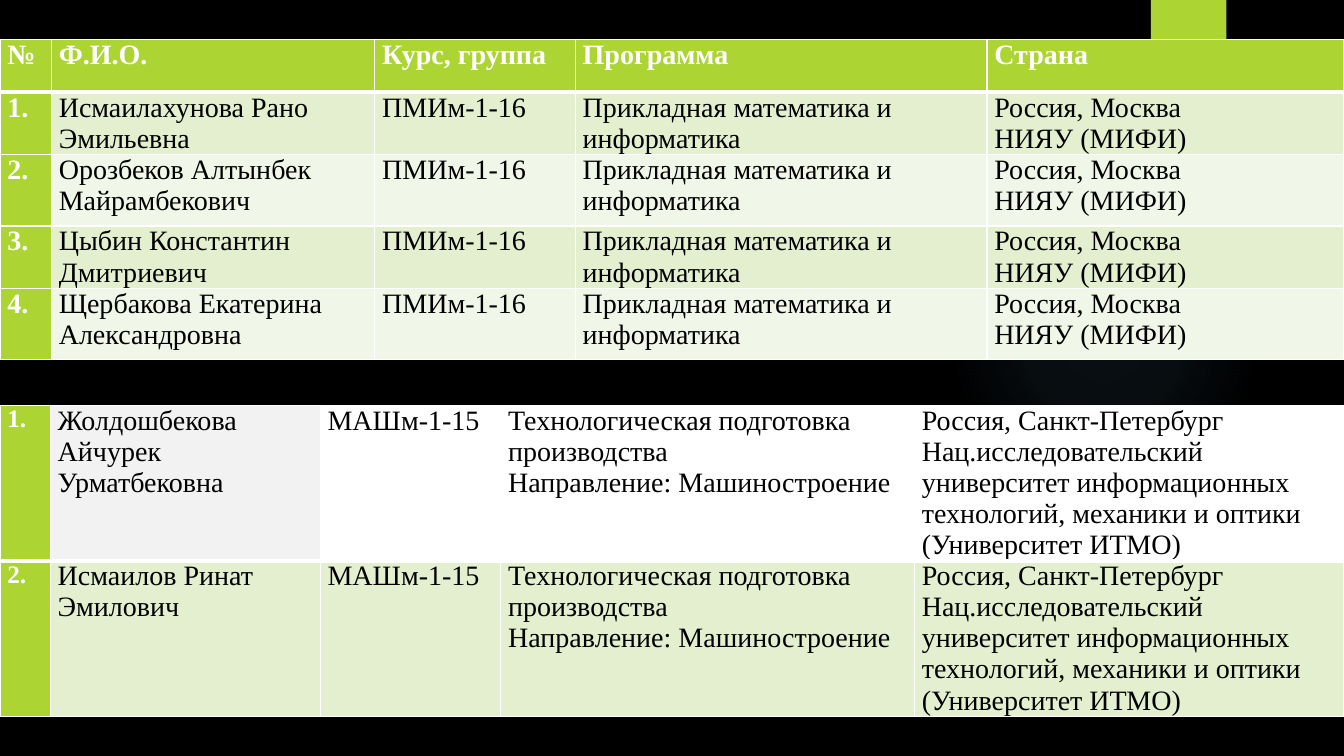
from lxml import etree
from pptx import Presentation
from pptx.dml.color import RGBColor
from pptx.enum.shapes import MSO_SHAPE
from pptx.oxml import parse_xml
from pptx.oxml.ns import nsdecls
from pptx.util import Emu, Pt

RECT = MSO_SHAPE.RECTANGLE
OVAL = MSO_SHAPE.OVAL
PX = 9525
FONT = "Times New Roman"
INK = {
    "black": "000000", "white": "FFFFFF", "lime": "ACD433", "sky": "7AC4F0",
    "mint": "E3EFCE", "pale": "F1F7E8", "gray": "F2F2F2",
}

MATH = "Прикладная математика и информатика"
MEPHI = "Россия, Москва\nНИЯУ (МИФИ)"
TECH = "Технологическая подготовка производства\nНаправление: Машиностроение"
ITMO = ("Россия, Санкт-Петербург\nНац.исследовательский университет информационных "
        "технологий, механики и оптики\n(Университет ИТМО)")

HEAD = ["№", "Ф.И.О.", "Курс, группа", "Программа", "Страна"]
MATH_NAMES = [
    "Исмаилахунова Рано Эмильевна", "Орозбеков Алтынбек Майрамбекович",
    "Цыбин Константин Дмитриевич", "Щербакова Екатерина Александровна",
]
TECH_NAMES = ["Жолдошбекова Айчурек Урматбековна", "Исмаилов Ринат Эмилович"]


def px(num):
    return Emu(num * PX)


def rgb(name):
    return RGBColor.from_string(INK[name])


def add_shape(slide, kind, *box):
    shape = slide.shapes.add_shape(kind, *map(px, box))
    shape.shadow.inherit = False
    shape.line.fill.background()
    shape.fill.solid()
    return shape


def add_glow(slide):
    """Faint round light that fades out from its centre."""
    oval = add_shape(slide, OVAL, 903, 176, 296, 296)
    stops = "".join(
        f'<a:gs pos="{pos}000"><a:srgbClr val="{INK["sky"]}">'
        f'<a:alpha val="{alpha}000"/></a:srgbClr></a:gs>'
        for pos, alpha in [(0, 7), (36, 6), (69, 0)])
    grad = parse_xml(
        f'<a:gradFill {nsdecls("a")}><a:gsLst>{stops}</a:gsLst><a:path path="circle">'
        '<a:fillToRect l="50000" t="50000" r="50000" b="50000"/></a:path></a:gradFill>')
    props = oval.element.spPr
    solid = props.find("a:solidFill", {"a": etree.QName(grad).namespace})
    props.replace(solid, grad)


def set_edges(cell, edges):
    """Draw white cell borders; edges maps a side to its width in points."""
    props = cell._tc.get_or_add_tcPr()
    for spot, side in enumerate(s for s in "LRTB" if s in edges):
        props.insert(spot, parse_xml(
            f'<a:ln{side} {nsdecls("a")} w="{Pt(edges[side])}"><a:solidFill>'
            f'<a:srgbClr val="{INK["white"]}"/></a:solidFill></a:ln{side}>'))


def fill_cell(cell, text, fill, size, bold):
    cell.text = text
    cell.margin_left = cell.margin_right = px(7)
    cell.margin_top = cell.margin_bottom = 0
    cell.fill.solid()
    cell.fill.fore_color.rgb = rgb(fill)
    for para in cell.text_frame.paragraphs:
        for run in para.runs:
            run.font.name = FONT
            run.font.size = Pt(size)
            run.font.bold = bold
            run.font.color.rgb = rgb("white" if bold else "black")


def add_grid(slide, top, cols, highs, rows, fills, size):
    """Full-width table; fills has one list of cell colours per row, size is for numbers."""
    frame = slide.shapes.add_table(
        len(rows), len(cols), 0, px(top), px(sum(cols)), px(sum(highs)))
    table = frame.table
    table.first_row = table.horz_banding = False
    for col, wide in zip(table.columns, cols):
        col.width = px(wide)
    for r, (row, high) in enumerate(zip(rows, highs)):
        table.rows[r].height = px(high)
        for c, text in enumerate(row):
            cell = table.cell(r, c)
            fill = fills[r][c]
            fill_cell(cell, text, fill, 20 if c else size, fill == "lime")
            edges = {"L": 1, "R": 1, "B": 1 if r else 3}
            if r == 0:
                edges["T"] = 1
            set_edges(cell, edges)


def list_rows(names, group, course, place):
    return [[f"{n}.", name, group, course, place] for n, name in enumerate(names, 1)]


def main():
    deck = Presentation()
    deck.slide_width, deck.slide_height = px(1280), px(720)
    slide = deck.slides.add_slide(deck.slide_layouts[6])
    slide.background.fill.solid()
    slide.background.fill.fore_color.rgb = rgb("black")

    add_glow(slide)
    tab = add_shape(slide, RECT, 1096, 0, 72, 120)
    tab.fill.fore_color.rgb = rgb("lime")

    rows = [HEAD] + list_rows(MATH_NAMES, "ПМИм-1-16", MATH, MEPHI)
    bands = [["lime"] + [tone] * 4 for tone in ["lime"] + ["mint", "pale"] * 2]
    add_grid(slide, 38, [49, 308, 191, 392, 340], [50, 59, 68, 59, 68], rows, bands, 20)

    rows = list_rows(TECH_NAMES, "МАШм-1-15", TECH, ITMO)
    bands = [["lime", "gray"] + ["white"] * 3, ["lime"] + ["mint"] * 4]
    add_grid(slide, 386, [48, 257, 172, 394, 409], [148, 148], rows, bands, 18)

    deck.save("out.pptx")


if __name__ == "__main__":
    main()
